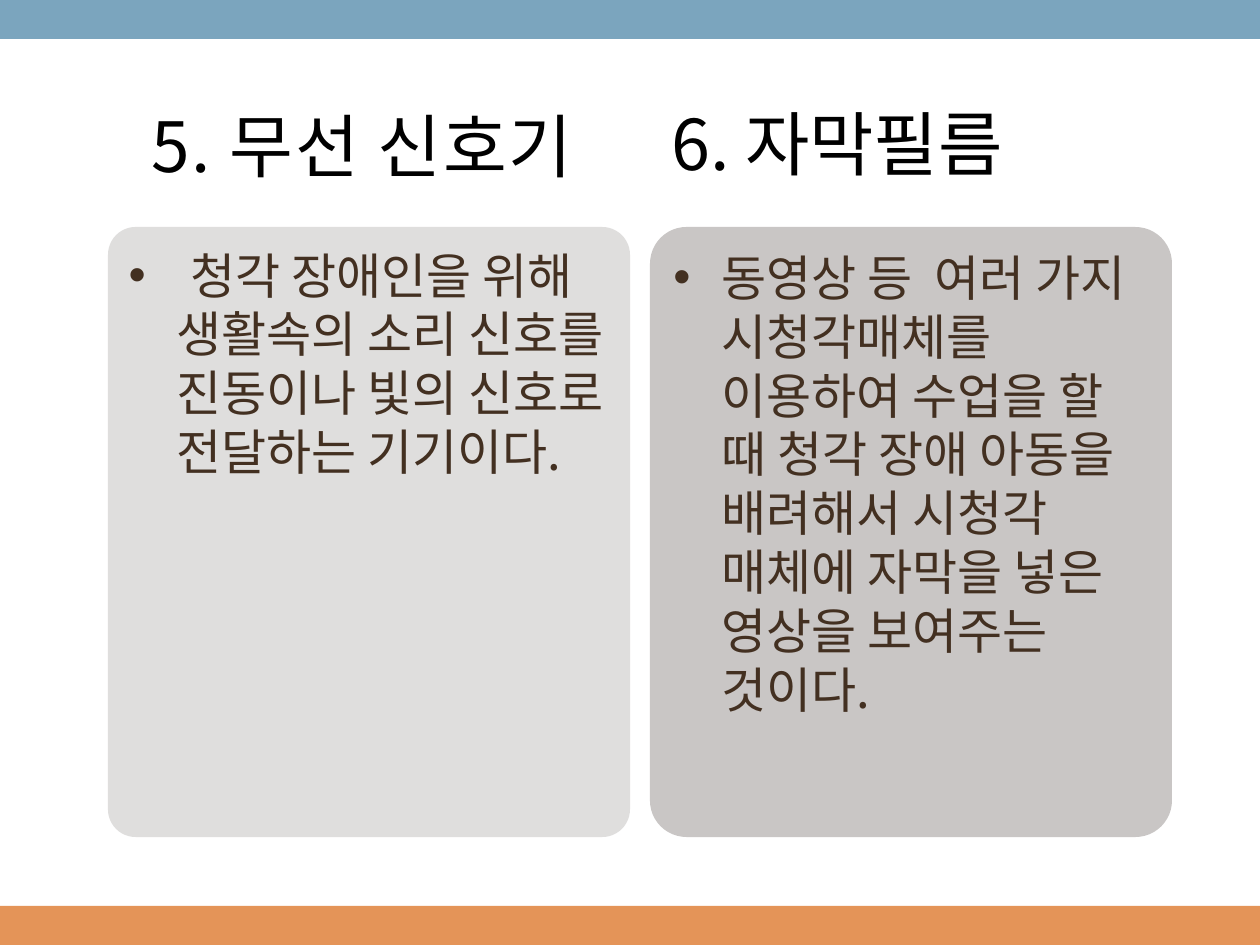
"""Build a two-column slide on aids for deaf learners."""
from lxml import etree
from pptx import Presentation
from pptx import util as u
from pptx.dml.color import RGBColor
from pptx.enum import shapes, text
from pptx.oxml.ns import qn

SCALE = 914400 / 126
BLUE = RGBColor(0x7B, 0xA5, 0xBE)
ORANGE = RGBColor(0xE4, 0x94, 0x58)
LIGHT = RGBColor(0xC0, 0xBE, 0xBD)
DARK = RGBColor(0x94, 0x8F, 0x8D)
BROWN = RGBColor(0x43, 0x30, 0x21)
BLACK = RGBColor(0, 0, 0)
SANS = "Noto Sans CJK KR"
SERIF = "TeX Gyre Schola"


def px(n):
    return u.Emu(round(n * SCALE))


class Deck:
    """Holds the style and the current slide."""

    def __init__(self):
        self.prs = Presentation()
        self.prs.slide_width, self.prs.slide_height = px(1260), px(945)
        self.slide = self.prs.slides.add_slide(self.prs.slide_layouts[3])

    def place(self, item, box):
        item.left, item.top, item.width, item.height = map(px, box)

    def bar(self, box, color):
        rect = self.slide.shapes.add_shape(shapes.MSO_SHAPE.RECTANGLE, *map(px, box))
        rect.shadow.inherit = False
        rect.fill.solid()
        rect.fill.fore_color.rgb = color
        rect.line.fill.background()

    def fit(self, item, runs, size, color, drop, anchor=text.MSO_ANCHOR.TOP):
        frame = item.text_frame
        frame.word_wrap = True
        frame.auto_size = text.MSO_AUTO_SIZE.NONE
        frame.vertical_anchor = anchor
        frame.margin_left = frame.margin_right = u.Inches(0.1)
        frame.margin_top, frame.margin_bottom = px(6 + drop), px(6)
        para = frame.paragraphs[0]
        para.line_spacing = u.Pt(round(size * 1.2, 1))
        for words, face in runs:
            run = para.add_run()
            run.text = words
            font = run.font
            font.size, font.name, font.color.rgb = u.Pt(size), face, color
            latin = run._r.rPr.find(qn("a:latin"))
            latin.addnext(etree.Element(qn("a:ea"), typeface=face))
        return para

    def title(self, words, box):
        head = self.slide.shapes.title
        self.place(head, box)
        para = self.fit(head, [(words, SANS)], 39.6, BLACK, 11, text.MSO_ANCHOR.MIDDLE)
        para.alignment = text.PP_ALIGN.CENTER
        para.runs[0]._r.rPr.set("spc", "100")

    def label(self, words, box):
        item = self.slide.shapes.add_textbox(*map(px, box))
        self.fit(item, [(words, SANS)], 40, BLACK, 7)

    def card(self, idx, runs, box, color, curve):
        item = self.slide.placeholders[idx]
        self.place(item, box)
        props = item._element.spPr
        geom = etree.Element(qn("a:prstGeom"), prst="roundRect")
        guides = etree.SubElement(geom, qn("a:avLst"))
        etree.SubElement(guides, qn("a:gd"), name="adj", fmla=f"val {curve}")
        props.find(qn("a:xfrm")).addnext(geom)
        item.fill.solid()
        item.fill.fore_color.rgb = color
        tint = props.find(qn("a:solidFill"))[0]
        etree.SubElement(tint, qn("a:alpha"), val="50000")
        para = self.fit(item, runs, 28, BROWN, 4)
        para.space_before = u.Pt(0)
        pad = para._p.get_or_add_pPr()
        pad.set("marL", str(int(px(48))))
        pad.set("indent", str(int(px(-48))))


def main():
    deck = Deck()
    deck.bar((0, 906, 1260, 39), ORANGE)
    deck.bar((0, 0, 1260, 39), BLUE)
    deck.title("5. 무선 신호기", (108, 69, 508, 140))
    deck.label("6. 자막필름", (659, 88, 512, 97))
    left = [
        (" ", SERIF),
        ("청각 장애인을 위해 생활속의 소리 신호를 진동이나 빛의 신호로 전달하는 기기이다.", SANS),
    ]
    right = [
        ("동영상 등  여러 가지 시청각매체를 이용하여 수업을 할 때 청각 장애 아동을 "
         "배려해서 시청각 매체에 자막을 넣은 영상을 보여주는 것이다.", SANS),
    ]
    cards = [(left, LIGHT, 5300), (right, DARK, 7000)]
    for i, (runs, color, curve) in enumerate(cards):
        deck.card(i + 1, runs, (108 + 542 * i, 227, 522, 610), color, curve)
    deck.prs.save("out.pptx")


if __name__ == "__main__":
    main()
